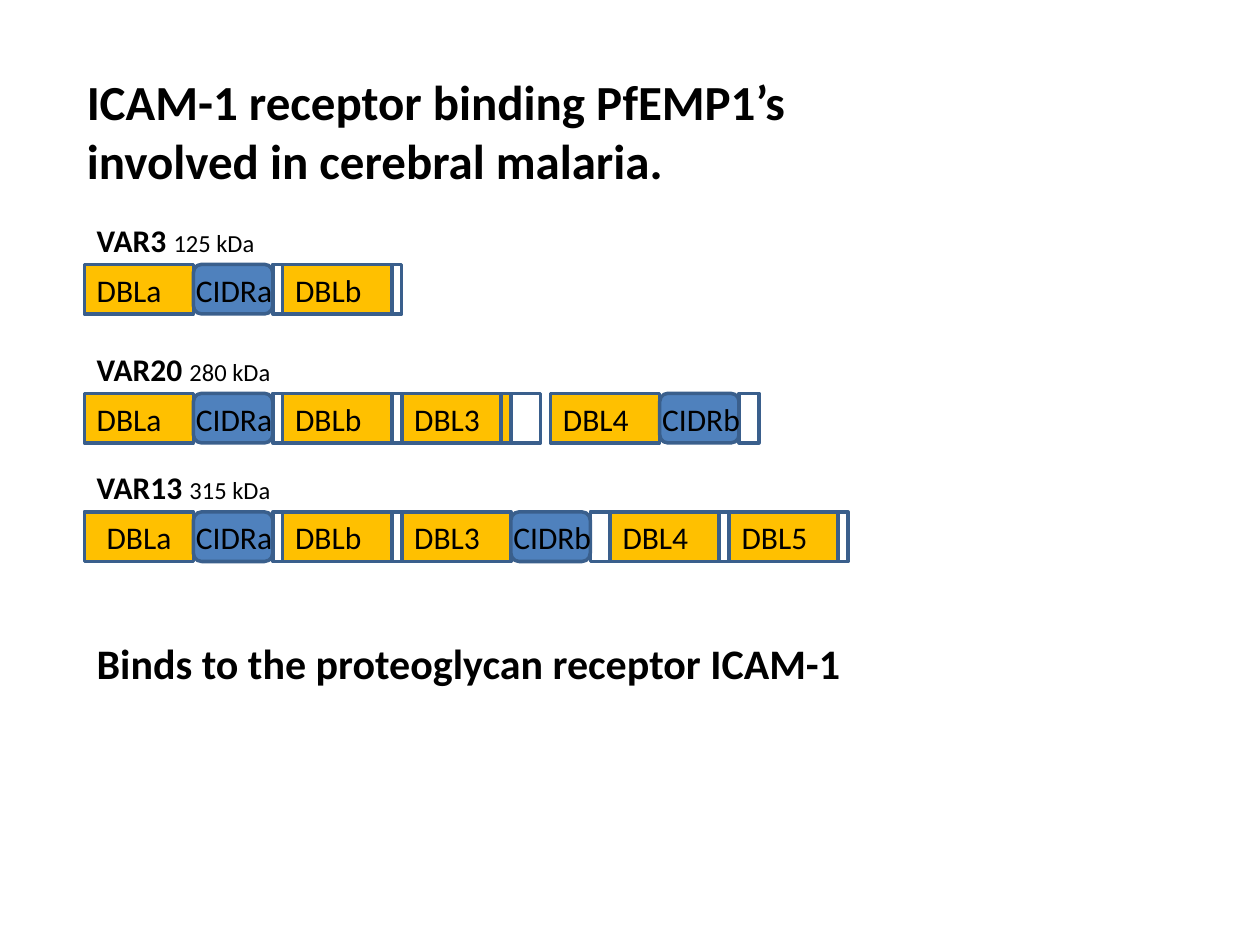
import pptx
import pptx.dml.color
import pptx.enum.shapes
import pptx.enum.text
import pptx.util
from pptx.util import Cm

COLORS = {"DBL": "FFC000", "CIDR": "4F81BD", "outline": "3A5F8C", "text": "000000"}
WIDTHS = {"DBL": 2.2, "CIDR": 1.6}
LEFT = 1.7
DOMAIN_HEIGHT = 1.0
LABEL_WIDTH = 3.0
LABEL_HEIGHT = 1.02
CIDR_LABEL_SHIFT = -0.2

# A string is a named domain, a number is the width of a linker in cm,
# and ("move", x) shifts the next part along the chain by x cm.
# Each protein: name, mass, top, shift of its first label, caption width, parts
PROTEINS = [
    ("VAR3", "125 kDa", 5.33, 0, 21.6, ["DBLa", "CIDRa", 0.2, "DBLb", 0.2]),
    ("VAR20", "280 kDa", 7.93, 0, 5.6,
     ["DBLa", "CIDRa", 0.2, "DBLb", 0.2, "DBL3", ("move", -0.2), 0.8,
      ("move", 0.2), "DBL4", "CIDRb", 0.4]),
    ("VAR13", "315 kDa", 10.32, 0.2, 21.6,
     ["DBLa", "CIDRa", 0.2, "DBLb", 0.2, "DBL3", "CIDRb", 0.4,
      "DBL4", 0.2, "DBL5", 0.2]),
]


def rgb(name):
    return pptx.dml.color.RGBColor.from_string(COLORS[name])


def add_text(slide, left, top, width, height, *runs):
    """Add a text box; each run is (text, size in points, bold)."""
    box = slide.shapes.add_textbox(Cm(left), Cm(top), Cm(width), Cm(height))
    frame = box.text_frame
    frame.word_wrap = True
    frame.auto_size = pptx.enum.text.MSO_AUTO_SIZE.SHAPE_TO_FIT_TEXT
    for text, size, bold in runs:
        run = frame.paragraphs[0].add_run()
        run.text = text
        run.font.name = "Calibri"
        run.font.size = pptx.util.Pt(size)
        run.font.bold = bold
        run.font.color.rgb = rgb("text")


def add_segment(slide, left, top, width, family=None):
    """Draw a domain of the given family, or a hollow linker without one."""
    presets = pptx.enum.shapes.MSO_SHAPE
    preset = presets.ROUNDED_RECTANGLE if family == "CIDR" else presets.RECTANGLE
    segment = slide.shapes.add_shape(
        preset, Cm(left), Cm(top), Cm(width), Cm(DOMAIN_HEIGHT))
    segment.shadow.inherit = False
    segment.line.color.rgb = rgb("outline")
    segment.line.width = pptx.util.Pt(2)
    if family:
        segment.fill.solid()
        segment.fill.fore_color.rgb = rgb(family)
    else:
        segment.fill.background()


def add_protein(slide, name, mass, top, first_shift, caption_width, parts):
    """Lay the parts end to end, then write the labels above them."""
    labels = []
    left = LEFT
    for part in parts:
        if isinstance(part, tuple):
            left += part[1]
        elif isinstance(part, str):
            family = "CIDR" if part.startswith("CIDR") else "DBL"
            add_segment(slide, left, top, WIDTHS[family], family)
            shift = CIDR_LABEL_SHIFT if family == "CIDR" else 0
            labels.append((part, left + shift))
            left += WIDTHS[family]
        else:
            add_segment(slide, left, top, part)
            left += part

    for index, (label, label_left) in enumerate(labels):
        shift = first_shift if index == 0 else 0
        add_text(slide, label_left + shift, top, LABEL_WIDTH, LABEL_HEIGHT,
                 (label, 18, False))
    add_text(slide, LEFT, top - DOMAIN_HEIGHT, caption_width, LABEL_HEIGHT,
             (name + " ", 18, True), (mass, 14, False))


def main():
    presentation = pptx.Presentation()
    presentation.slide_width = Cm(25.4)
    presentation.slide_height = Cm(19.05)
    slide = presentation.slides.add_slide(presentation.slide_layouts[6])

    for protein in PROTEINS:
        add_protein(slide, *protein)
    add_text(slide, 1.5, 1.32, 17.2, 2.65,
             ("ICAM-1 receptor binding PfEMP1’s involved in cerebral malaria.", 28, True))
    add_text(slide, LEFT, 12.73, 20, 1.28,
             ("Binds to the proteoglycan receptor ICAM-1", 24, True))

    presentation.save("out.pptx")


if __name__ == "__main__":
    main()
